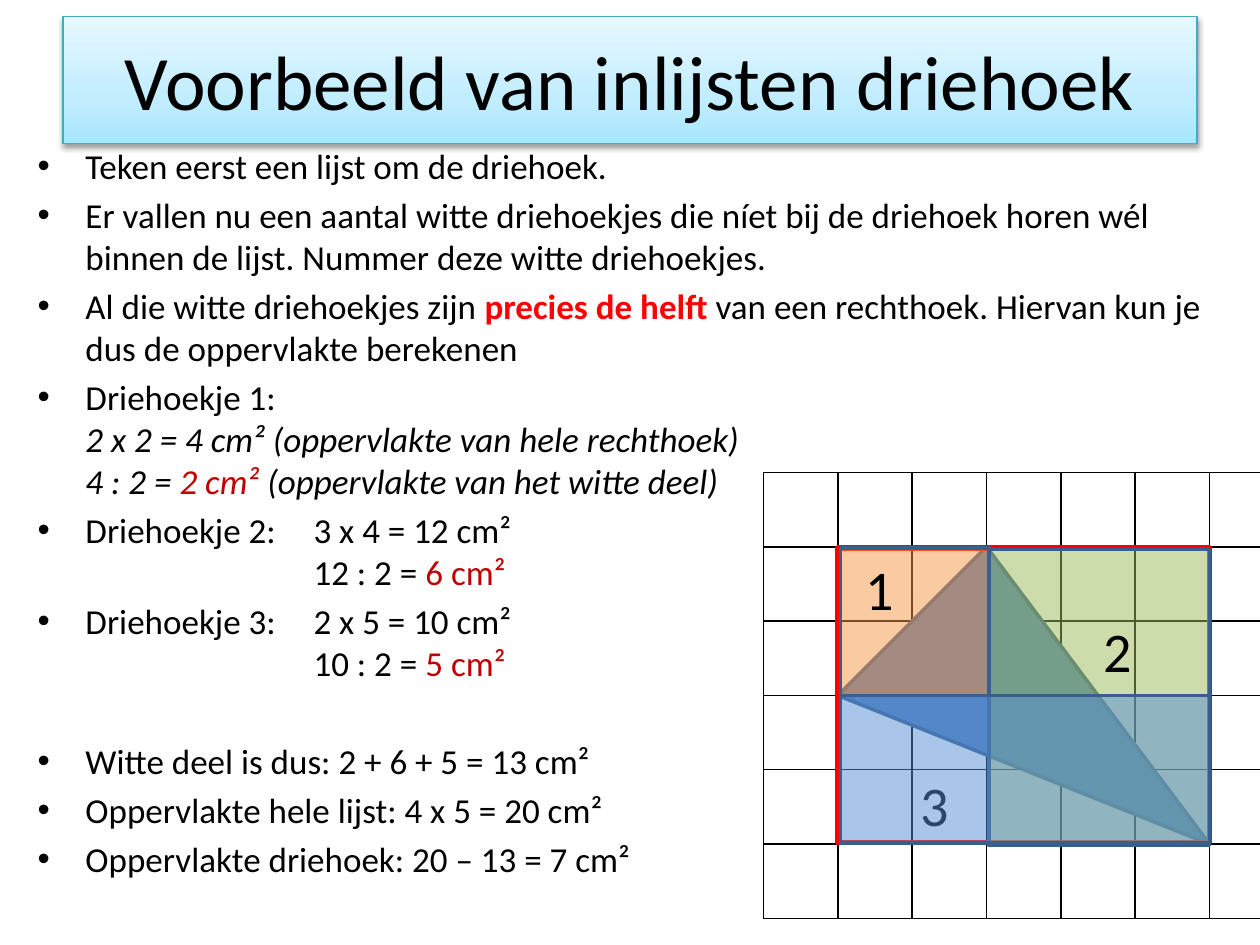
import pptx
import pptx.dml.color
import pptx.enum.shapes
import pptx.enum.text
import pptx.oxml
import pptx.oxml.ns
import pptx.util
from pptx.util import Inches

RGBColor = pptx.dml.color.RGBColor
BLACK = RGBColor(0x00, 0x00, 0x00)
RED = RGBColor(0xFF, 0x00, 0x00)
DARK_RED = RGBColor(0xC0, 0x00, 0x00)
BLUE = RGBColor(0x4F, 0x81, 0xBD)
LIGHT_BLUE = RGBColor(0x55, 0x8E, 0xD5)
ORANGE = RGBColor(0xF7, 0x96, 0x46)
GREEN = RGBColor(0x9B, 0xBB, 0x59)
OUTLINE = RGBColor(0x3A, 0x5F, 0x8C)
TEAL = RGBColor(0x46, 0xAA, 0xC5)
TITLE_STOPS = [(0, "A7E6FF"), (35, "C1EDFF"), (100, "E7F8FF")]

GRID_LEFT, GRID_TOP, CELL = 6.06, 3.75, 0.59
GRID_COLUMNS, GRID_ROWS = 7, 6
ANSWER_TAB = 2.19

# Each paragraph is a list of (text, run properties); "\n" breaks the line
ITALIC = {"italic": True}
ANSWER = {"color": DARK_RED}
STEPS = [
    [("Teken eerst een lijst om de driehoek.", {})],
    [("Er vallen nu een aantal witte driehoekjes die níet bij de driehoek "
      "horen wél binnen de lijst. Nummer deze witte driehoekjes.", {})],
    [("Al die witte driehoekjes zijn ", {}),
     ("precies de helft", {"color": RED, "bold": True}),
     (" van een rechthoek. Hiervan kun je dus de oppervlakte berekenen", {})],
    [("Driehoekje 1: \n", {}),
     ("2 x 2 = 4 cm² (oppervlakte van hele rechthoek)\n4 : 2 = ", ITALIC),
     ("2 cm² ", {**ITALIC, **ANSWER}),
     ("(oppervlakte van het witte deel)", ITALIC)],
    [("Driehoekje 2:\t3 x 4 = 12 cm²\n\t12 : 2 = ", {}), ("6 cm²", ANSWER)],
    [("Driehoekje 3:\t2 x 5 = 10 cm²\n\t10 : 2 = ", {}), ("5 cm²", ANSWER)],
]
CONCLUSIONS = [
    [("Witte deel is dus: 2 + 6 + 5 = 13 cm²", {})],
    [("Oppervlakte hele lijst: 4 x 5 = 20 cm²", {})],
    [("Oppervlakte driehoek: 20 – 13 = 7 cm²", {})],
]


def add_xml(parent, xml):
    """Append a piece of DrawingML to a parent element."""
    parent.append(pptx.oxml.parse_xml(
        xml.replace(">", " %s>" % pptx.oxml.ns.nsdecls("a"), 1)))


class Page:
    """Holds the slide and the style of its elements."""

    font = "Calibri"

    def __init__(self, deck):
        self.slide = deck.slides.add_slide(deck.slide_layouts[5])
        self.shapes = self.slide.shapes

    def style_run(self, span, size, color=BLACK, bold=False, italic=False):
        span.font.name = self.font
        span.font.size = pptx.util.Pt(size)
        span.font.color.rgb = color
        span.font.bold = bold
        span.font.italic = italic

    def style_shape(self, shape, fill, line, width, opacity=100):
        shape.shadow.inherit = False
        shape.line.color.rgb = line
        shape.line.width = pptx.util.Pt(width)
        if fill is None:
            shape.fill.background()
            return
        shape.fill.solid()
        shape.fill.fore_color.rgb = fill
        if opacity < 100:
            color = shape._element.spPr.find(".//" + pptx.oxml.ns.qn("a:solidFill"))[0]
            add_xml(color, '<a:alpha val="%d"></a:alpha>' % (opacity * 1000))

    def title(self, text, left, top, width, height):
        box = self.shapes.title
        box.left, box.top = Inches(left), Inches(top)
        box.width, box.height = Inches(width), Inches(height)
        frame = box.text_frame
        frame.text = text
        frame.vertical_anchor = pptx.enum.text.MSO_ANCHOR.MIDDLE
        frame.paragraphs[0].alignment = pptx.enum.text.PP_ALIGN.CENTER
        self.style_run(frame.paragraphs[0].runs[0], 44)
        properties = box._element.spPr
        stops = "".join(
            '<a:gs pos="%d"><a:srgbClr val="%s"/></a:gs>' % (place * 1000, color)
            for place, color in TITLE_STOPS)
        add_xml(properties, '<a:gradFill rotWithShape="1"><a:gsLst>' + stops
                + '</a:gsLst><a:lin ang="16200000" scaled="1"/></a:gradFill>')
        box.line.color.rgb = TEAL
        box.line.width = pptx.util.Pt(0.75)
        add_xml(properties,
                '<a:effectLst><a:outerShdw blurRad="39370" dist="20320" '
                'dir="5400000" rotWithShape="0"><a:srgbClr val="000000">'
                '<a:alpha val="38000"/></a:srgbClr></a:outerShdw></a:effectLst>')

    def text_box(self, left, top, width, height):
        box = self.shapes.add_textbox(
            Inches(left), Inches(top), Inches(width), Inches(height))
        box.text_frame.word_wrap = True
        return box.text_frame

    def bullet(self, para, parts, space_before):
        para.space_before = pptx.util.Pt(space_before)
        properties = para._p.get_or_add_pPr()
        properties.set("marL", str(Inches(0.38)))
        properties.set("indent", str(Inches(-0.38)))
        add_xml(properties, '<a:buFont typeface="Arial"></a:buFont>')
        add_xml(properties, '<a:buChar char="•"></a:buChar>')
        add_xml(properties, '<a:tabLst><a:tab pos="%d" algn="l"/></a:tabLst>'
                % Inches(ANSWER_TAB))
        for text, look in parts:
            for number, line in enumerate(text.split("\n")):
                if number:
                    para.add_line_break()
                if line:
                    span = para.add_run()
                    span.text = line
                    self.style_run(span, 20, **look)

    def label(self, text, left, top):
        frame = self.text_box(left, top, 0.55, 0.64)
        frame.text = text
        self.style_run(frame.paragraphs[0].runs[0], 32)

    def grid(self):
        table = self.shapes.add_table(
            GRID_ROWS, GRID_COLUMNS, Inches(GRID_LEFT), Inches(GRID_TOP),
            Inches(GRID_COLUMNS * CELL), Inches(GRID_ROWS * CELL)).table
        for column in table.columns:
            column.width = Inches(CELL)
        for row in table.rows:
            row.height = Inches(CELL)
        for cell in table.iter_cells():
            properties = cell._tc.get_or_add_tcPr()
            for side in ("lnL", "lnR", "lnT", "lnB"):
                add_xml(properties, '<a:%s w="12700"><a:solidFill><a:srgbClr '
                        'val="000000"/></a:solidFill></a:%s>' % (side, side))
            cell.fill.background()

    def triangle(self, corners):
        """Draw a triangle through grid points (column, row)."""
        points = [(Inches(GRID_LEFT + column * CELL), Inches(GRID_TOP + row * CELL))
                  for column, row in corners]
        builder = self.shapes.build_freeform(*points[0])
        builder.add_line_segments(points[1:], close=True)
        self.style_shape(builder.convert_to_shape(), BLUE, OUTLINE, 2)

    def rectangle(self, left, top, width, height, fill, line=OUTLINE, weight=2):
        shape = self.shapes.add_shape(
            pptx.enum.shapes.MSO_SHAPE.RECTANGLE,
            Inches(left), Inches(top), Inches(width), Inches(height))
        self.style_shape(shape, fill, line, weight, opacity=50)


def main():
    deck = pptx.Presentation()
    deck.slide_width, deck.slide_height = Inches(10), Inches(7.5)
    page = Page(deck)

    # Title and explanation
    page.title("Voorbeeld van inlijsten driehoek", 0.5, 0.13, 9, 1.01)
    frame = page.text_box(0.2, 1.1, 9.61, 6.43)
    for number, parts in enumerate(STEPS + CONCLUSIONS):
        para = frame.add_paragraph() if number else frame.paragraphs[0]
        page.bullet(para, parts, 32 if number == len(STEPS) else 4)

    # Triangle on squared paper, with its red frame
    page.grid()
    page.triangle([(6, 5), (1, 3), (3, 1)])
    page.rectangle(6.65, 4.35, 2.95, 2.34, None, RED, 3)

    # Numbered rectangles; the third lies over the labels
    page.rectangle(6.67, 4.35, 1.18, 1.17, ORANGE)
    page.rectangle(7.85, 4.36, 1.75, 2.35, GREEN)
    for text, left, top in [("1", 6.77, 4.35), ("2", 8.66, 4.84), ("3", 7.21, 6.07)]:
        page.label(text, left, top)
    page.rectangle(6.67, 5.52, 2.93, 1.17, LIGHT_BLUE)

    deck.save("out.pptx")


if __name__ == "__main__":
    main()
